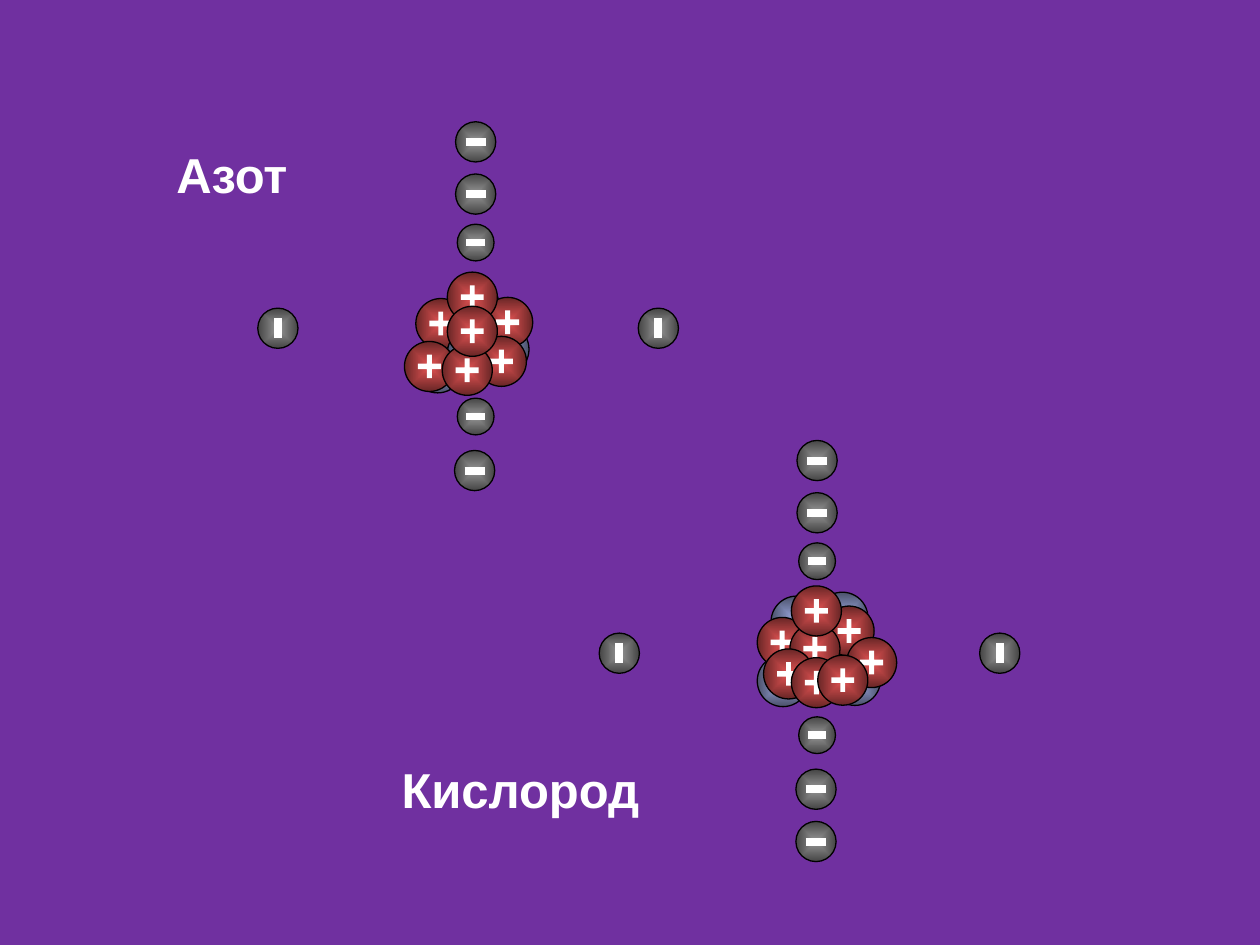
from pptx import Presentation
from pptx.util import Pt
from pptx.dml.color import RGBColor
from pptx.enum.shapes import MSO_SHAPE as Shape, MSO_CONNECTOR as Link
from pptx.enum.text import PP_ALIGN as Align, MSO_AUTO_SIZE as Fit
from pptx.oxml import parse_xml
from pptx.oxml.ns import nsdecls, qn

PURPLE = RGBColor(0x70, 0x30, 0xA0)
WHITE = RGBColor(0xFF, 0xFF, 0xFF)
BLACK = RGBColor(0, 0, 0)
BLUE = RGBColor(0xA1, 0xAE, 0xE7), RGBColor(0x4B, 0x51, 0x6B)
RED = RGBColor(0xE3, 0x53, 0x53), RGBColor(0x69, 0x26, 0x26)
GRAY = RGBColor(0x96, 0x96, 0x96), RGBColor(0x45, 0x45, 0x45)

ATOMS = [
    {
        "name": "Азот", "label": (82.1, 82.8, 100.8),
        "center": (271.8, 188.3), "side": -0.7, "count": 5,
        "core": [
            ("n", 235.4, 195.1), ("n", 272.9, 185), ("n", 255.6, 159.1),
            ("p", 237.6, 170.6), ("p", 275.8, 169.9), ("n", 255.6, 187.2),
            ("p", 272.2, 192.2), ("p", 255.6, 155.5), ("p", 231.1, 195.1),
            ("p", 252.7, 197.3), ("p", 255.6, 175),
        ],
    },
    {
        "name": "Кислород", "label": (212.4, 434.2, 169.9),
        "center": (466.9, 370.4), "side": 2.9, "count": 6,
        "core": [
            ("n", 432.7, 374.4), ("n", 473.8, 373.7), ("n", 466.6, 338.4),
            ("n", 468, 366.5), ("n", 440.6, 340.6), ("p", 432.7, 352.8),
            ("p", 470.9, 346.3), ("p", 451.4, 356.4), ("p", 452.2, 334.8),
            ("p", 436.3, 370.8), ("p", 452.2, 375.8), ("p", 483.8, 364.3),
            ("p", 467.3, 374.4),
        ],
    },
]
COLUMN = [(0, -49.7, 21), (0, 49.7, 21), (0, -77.4, 23),
          (-0.6, 80.6, 23), (0, -107.2, 23), (-0.6, 110.5, 23)]
SIDES = [-113, 104.4]
NEUTRON, PROTON = 29.4, 28.6
PLUS_W, PLUS_H = 13.1, 13.5


def ball(shapes, x, y, size, tones):
    orb = shapes.add_shape(Shape.OVAL, Pt(x), Pt(y), Pt(size), Pt(size))
    orb.shadow.inherit = False
    orb.line.color.rgb = BLACK
    orb.line.width = Pt(0.75)
    orb.fill.gradient()
    for stop, tone, place in zip(orb.fill.gradient_stops, tones, (0, 1)):
        stop.color.rgb = tone
        stop.position = place
    grad = orb._element.spPr.find(qn("a:gradFill"))
    grad.replace(grad.find(qn("a:lin")), parse_xml(
        f'<a:path {nsdecls("a")} path="shape"><a:fillToRect '
        'l="50000" t="50000" r="50000" b="50000"/></a:path>'))


def proton(shapes, x, y):
    group = shapes.add_group_shape().shapes
    ball(group, x, y, PROTON, RED)
    plus = group.add_shape(
        Shape.CROSS, Pt(x + (PROTON - PLUS_W) / 2),
        Pt(y + (PROTON - PLUS_H) / 2), Pt(PLUS_W), Pt(PLUS_H))
    plus.adjustments[0] = 0.392
    plus.shadow.inherit = False
    plus.fill.solid()
    plus.fill.fore_color.rgb = WHITE
    plus.line.fill.background()


def electron(shapes, x, y, size, upright=False):
    group = shapes.add_group_shape().shapes
    ball(group, x - size / 2, y - size / 2, size, GRAY)
    dx, dy = (0, size / 4) if upright else (size / 4, 0)
    minus = group.add_connector(
        Link.STRAIGHT, Pt(x - dx), Pt(y - dy), Pt(x + dx), Pt(y + dy))
    minus.line.color.rgb = WHITE
    minus.line.width = Pt(4.5)
    minus._element.spPr.append(parse_xml(f'<a:effectLst {nsdecls("a")}/>'))


def label(shapes, text, x, y, width):
    box = shapes.add_textbox(Pt(x), Pt(y), Pt(width), Pt(33.8))
    frame = box.text_frame
    frame.margin_left = frame.margin_right = 0
    frame.margin_top = frame.margin_bottom = 0
    frame.word_wrap = True
    frame.auto_size = Fit.SHAPE_TO_FIT_TEXT
    frame.text = text
    para = frame.paragraphs[0]
    para.alignment = Align.CENTER
    para.space_before = Pt(2.8)
    font = para.runs[0].font
    font.name, font.size, font.bold = "Arial", Pt(28), True
    font.color.rgb = WHITE


def draw(shapes, atom):
    for kind, x, y in atom["core"]:
        if kind == "p":
            proton(shapes, x, y)
        else:
            ball(shapes, x, y, NEUTRON, BLUE)
    cx, cy = atom["center"]
    for dx, dy, size in COLUMN[:atom["count"]]:
        electron(shapes, cx + dx, cy + dy, size)
    for dx in SIDES:
        electron(shapes, cx + dx, cy + atom["side"], 23, True)
    label(shapes, atom["name"], *atom["label"])


def main():
    deck = Presentation()
    deck.slide_width, deck.slide_height = Pt(720), Pt(540)
    slide = deck.slides.add_slide(deck.slide_layouts[6])
    slide.background.fill.solid()
    slide.background.fill.fore_color.rgb = PURPLE
    for atom in ATOMS:
        draw(slide.shapes, atom)
    deck.save("out.pptx")


if __name__ == "__main__":
    main()
